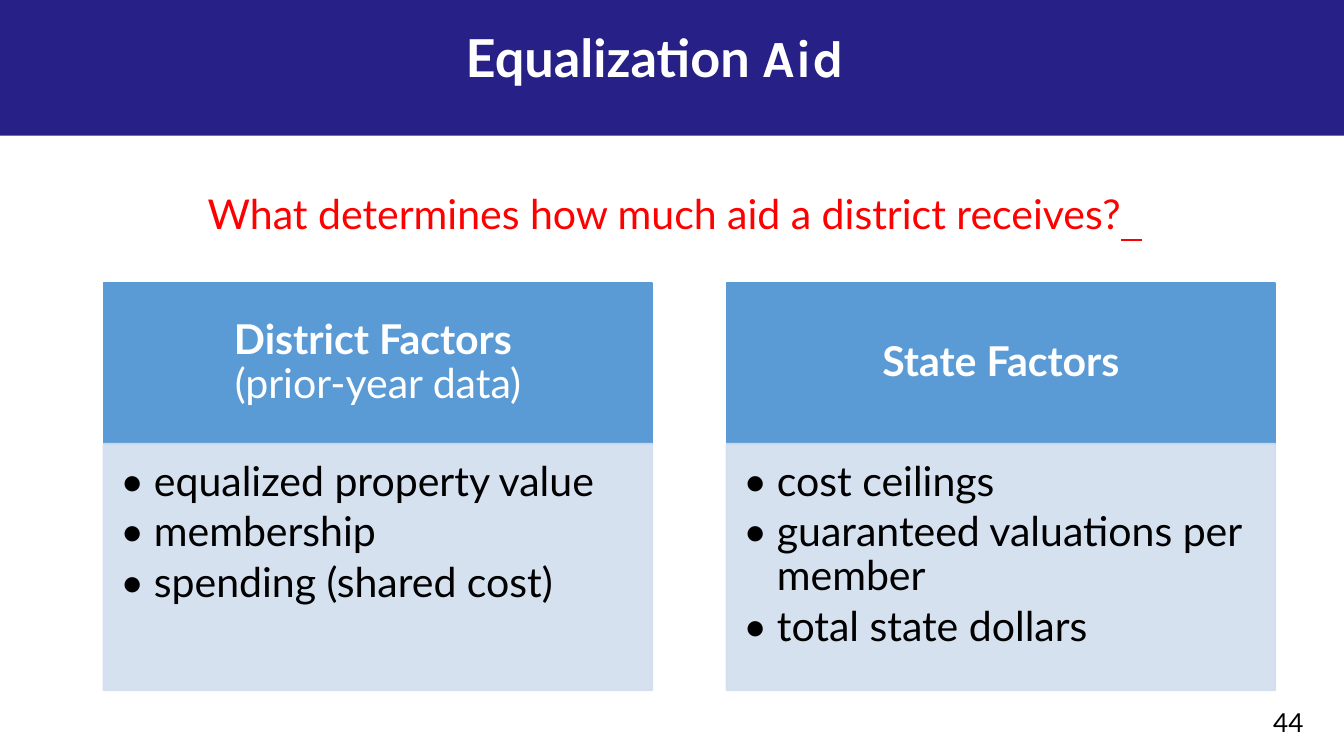
"""Build the Equalization Aid slide with its two columns of factors."""
from pptx import Presentation, util as u
from pptx.dml.color import RGBColor
from pptx.enum import shapes as sh, text as tx
from pptx.oxml.ns import qn
from lxml import etree

PX = 9525
NAVY = RGBColor(0x26, 0x20, 0x87)
BLUE = RGBColor(0x5B, 0x9B, 0xD5)
PALE = RGBColor(0xD2, 0xDE, 0xEF)
RED = RGBColor(0xFF, 0, 0)
WHITE = RGBColor(0xFF, 0xFF, 0xFF)
BLACK = RGBColor(0, 0, 0)
TOP, WIDTH, HEAD, BODY = 202, 392, 115, 176
INDENT = 24 * PX


def add_rect(left, top, width, height, fill):
    rect = slide.shapes.add_shape(
        sh.MSO_SHAPE.RECTANGLE, left * PX, top * PX, width * PX, height * PX)
    rect.shadow.inherit = False
    rect.fill.solid()
    rect.fill.fore_color.rgb = fill
    rect.line.color.rgb = fill
    rect.line.width = u.Pt(1)
    return rect


def add_run(para, words, size, color, bold=False, face="Lato"):
    run = para.add_run()
    run.text = words
    run.font.size = u.Pt(size)
    run.font.name = face
    run.font.bold = bold
    run.font.color.rgb = color
    return run


deck = Presentation()
deck.slide_width, deck.slide_height = 960 * PX, 540 * PX
slide = deck.slides.add_slide(deck.slide_layouts[5])

banner = add_rect(-1, 0, 961, 97, NAVY)
banner.line.fill.background()
slide.shapes.element.insert(2, banner.element)

title = slide.shapes.title
title.left, title.top, title.width, title.height = [
    n * PX for n in (125, 13, 648, 55)]
title.text_frame.vertical_anchor = tx.MSO_ANCHOR.MIDDLE
para = title.text_frame.paragraphs[0]
para.alignment = tx.PP_ALIGN.CENTER
props = para._p.get_or_add_pPr()
props.set("marL", str(38 * PX))
props.set("indent", "0")
add_run(para, "Equalization", 28, WHITE, True)
add_run(para, " Aid", 28, WHITE, True, "Karla")

columns = [
    (74, [("District Factors ", True), ("(prior-year data)", False)],
     ["equalized property value", "membership", "spending (shared cost)"]),
    (519, [("State Factors", True)],
     ["cost ceilings", "guaranteed valuations per member",
      "total state dollars"]),
]
for left, heads, items in columns:
    head = add_rect(left, TOP, WIDTH, HEAD, BLUE)
    frame = head.text_frame
    frame.word_wrap = True
    frame.vertical_anchor = tx.MSO_ANCHOR.MIDDLE
    frame.margin_left = frame.margin_right = 16 * PX
    frame.margin_top = frame.margin_bottom = 9 * PX
    for i, (words, bold) in enumerate(heads):
        para = frame.add_paragraph() if i else frame.paragraphs[0]
        para.alignment = tx.PP_ALIGN.CENTER
        para.line_spacing = 0.9
        add_run(para, words, 22, WHITE, bold)

    body = add_rect(left, TOP + HEAD, WIDTH, BODY, PALE)
    for tint in body.element.spPr.iter(qn("a:srgbClr")):
        etree.SubElement(tint, qn("a:alpha"), val="90000")
    frame = body.text_frame
    frame.word_wrap = True
    frame.vertical_anchor = tx.MSO_ANCHOR.TOP
    frame.margin_left = frame.margin_top = 12 * PX
    frame.margin_right, frame.margin_bottom = 16 * PX, 18 * PX
    for i, words in enumerate(items):
        para = frame.add_paragraph() if i else frame.paragraphs[0]
        para.alignment = tx.PP_ALIGN.LEFT
        para.line_spacing = 0.9
        para.space_after = u.Pt(3.3)
        props = para._p.get_or_add_pPr()
        props.set("marL", str(INDENT))
        props.set("indent", str(-INDENT))
        etree.SubElement(props, qn("a:buFont"), typeface="Lato")
        etree.SubElement(props, qn("a:buChar"), char="•")
        add_run(para, words, 22, BLACK)

ask = slide.shapes.add_textbox(65 * PX, 134 * PX, 834 * PX, 41 * PX)
ask.text_frame.word_wrap = True
para = ask.text_frame.paragraphs[0]
para.alignment = tx.PP_ALIGN.CENTER
para.line_spacing = 0.9
add_run(para, "What determines how much aid a district receives?", 22, RED)
add_run(para, "  ", 22, RED).font.underline = True

page = slide.shapes.add_textbox(900 * PX, 500 * PX, 53 * PX, 24 * PX)
page.text_frame.word_wrap = True
add_run(page.text_frame.paragraphs[0], "44", 14, BLACK)

deck.save("out.pptx")
